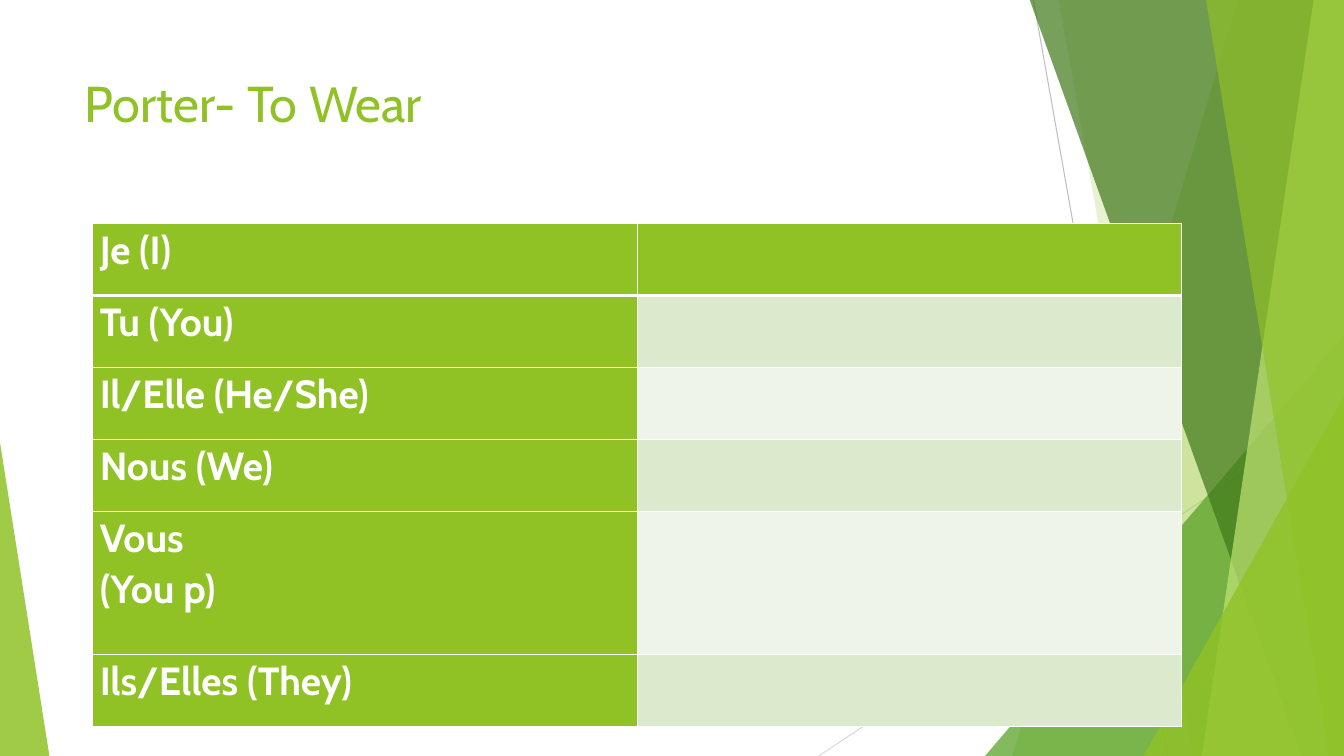
from dataclasses import dataclass

from lxml import etree
from pptx import Presentation
from pptx import util as u
from pptx.dml import color
from pptx.enum import shapes, text
from pptx.oxml import ns


@dataclass(frozen=True)
class Theme:
    font: str = "Cabin"
    title_size: int = 36
    cell_size: int = 28
    lime: str = "90C226"
    green: str = "54A021"
    forest: str = "3F7819"
    pale_lime: str = "C0E474"
    white: str = "FFFFFF"
    bands: tuple = ("DBE9CD", "EEF4E8")
    ray: str = "BFBFBF"
    faint_ray: str = "D9D9D9"


@dataclass(frozen=True)
class Box:
    left: float
    top: float
    width: float
    height: float

    @property
    def right(self):
        return self.left + self.width

    @property
    def bottom(self):
        return self.top + self.height

    def lengths(self):
        return [u.Inches(v) for v in (self.left, self.top, self.width, self.height)]


THEME = Theme()
PAGE = Box(0, 0, 13.33, 7.5)
PRONOUNS = ["Je (I)", "Tu (You)", "Il/Elle (He/She)", "Nous (We)",
            "Vous \v(You p)", "Ils/Elles (They)"]


def apply(target, values):
    for name, value in values.items():
        setattr(target, name, value)


def rgb(value):
    return color.RGBColor.from_string(value)


def style_font(font, size, ink, bold=False):
    apply(font, dict(name=THEME.font, size=u.Pt(size), bold=bold))
    font.color.rgb = rgb(ink)


def fill_glass(shape, tint, opacity):
    """Give a shape a see-through fill without outline or shadow."""
    shape.shadow.inherit = False
    shape.line.fill.background()
    shape.fill.solid()
    shape.fill.fore_color.rgb = rgb(tint)
    tint_xml = shape.fill._xPr.find(ns.qn("a:solidFill"))[0]
    etree.SubElement(tint_xml, ns.qn("a:alpha"), val=str(opacity * 1000))


def add_ray(slide, start, end, tint):
    ends = [u.Inches(v) for v in (*start, *end)]
    ray = slide.shapes.add_connector(shapes.MSO_CONNECTOR.STRAIGHT, *ends)
    ray.line.color.rgb = rgb(tint)
    ray.line.width = u.Pt(0.75)
    etree.SubElement(ray._element.spPr, ns.qn("a:effectLst"))


def add_blade(slide, box, top_x, bottom_x, tint, opacity):
    """A slanted band that runs from its left edge to the right of the box."""
    corners = [(top_x, box.top - 0.01), (box.right, box.top - 0.01),
               (box.right, box.bottom), (bottom_x, box.bottom)]
    points = [(u.Inches(x), u.Inches(y)) for x, y in corners]
    outline = slide.shapes.build_freeform(*points[0])
    outline.add_line_segments(points[1:], close=True)
    fill_glass(outline.convert_to_shape(), tint, opacity)


def add_corner(slide, box, apex, tint, opacity):
    corner = slide.shapes.add_shape(shapes.MSO_SHAPE.ISOSCELES_TRIANGLE, *box.lengths())
    corner.adjustments[0] = apex
    fill_glass(corner, tint, opacity)


def add_facets(slide, box):
    def bottom_right(width, height):
        return Box(box.right - width, box.bottom - height, width, height)

    # Thin rays behind the facets
    add_ray(slide, (10.25, box.top), (11.58, box.bottom), THEME.ray)
    add_ray(slide, (box.right, 4.03), (8.12, box.bottom), THEME.faint_ray)

    # Overlapping glass facets on the right
    add_blade(slide, box, 12.28, 10.04, THEME.lime, 30)
    add_blade(slide, box, 10.5, 11.83, THEME.lime, 20)
    add_corner(slide, bottom_right(3.56, 4.17), 1, THEME.green, 72)
    add_blade(slide, box, 10.21, 12.91, THEME.forest, 70)
    add_blade(slide, box, 13.03, 11.92, THEME.pale_lime, 70)
    add_blade(slide, box, 11.96, 13.18, THEME.lime, 65)
    add_corner(slide, bottom_right(1.99, 3.57), 1, THEME.lime, 80)

    # Sliver in the lower left corner
    add_corner(slide, Box(box.left, box.bottom - 3.11, 0.49, 3.11), 0, THEME.lime, 85)


def place_title(slide, box, wording):
    title = slide.shapes.title
    apply(title, dict(zip(("left", "top", "width", "height"), box.lengths())))
    frame = title.text_frame
    frame.text = wording
    apply(frame, dict(vertical_anchor=text.MSO_ANCHOR.TOP, word_wrap=True,
                      auto_size=text.MSO_AUTO_SIZE.NONE))
    heading = frame.paragraphs[0]
    heading.alignment = text.PP_ALIGN.LEFT
    style_font(heading.runs[0].font, THEME.title_size, THEME.lime)


def style_cell(cell, tint, top_line, bottom_line):
    cell.fill.solid()
    cell.fill.fore_color.rgb = rgb(tint)
    properties = cell._tc.get_or_add_tcPr()
    widths = dict(lnL=1, lnR=1, lnT=top_line, lnB=bottom_line)
    for place, (side, width) in enumerate(widths.items()):
        border = etree.Element(ns.qn("a:" + side), w=str(u.Pt(width)))
        paint = etree.SubElement(border, ns.qn("a:solidFill"))
        etree.SubElement(paint, ns.qn("a:srgbClr"), val=THEME.white)
        properties.insert(place, border)


def write_pronoun(cell, pronoun):
    apply(cell, dict(margin_left=u.Inches(0.07), margin_right=u.Inches(0.07),
                     margin_top=0, margin_bottom=0))
    cell.text = pronoun
    line = cell.text_frame.paragraphs[0]
    line.line_spacing = 1.07
    for run in line.runs:
        style_font(run.font, THEME.cell_size, THEME.white, bold=True)


def add_conjugation(slide, box, pronouns):
    table = slide.shapes.add_table(len(pronouns), 2, *box.lengths()).table
    for column in table.columns:
        column.width = u.Inches(box.width / 2)

    # Each line of wording gets an equal share of the height
    shares = [pronoun.count("\v") + 1 for pronoun in pronouns]
    for index, (pronoun, share) in enumerate(zip(pronouns, shares)):
        table.rows[index].height = u.Inches(box.height * share / sum(shares))
        answer_tint = THEME.bands[(index - 1) % 2] if index else THEME.lime
        top_line = 3 if index == 1 else 1
        bottom_line = 3 if index == 0 else 1
        for column, tint in enumerate((THEME.lime, answer_tint)):
            style_cell(table.cell(index, column), tint, top_line, bottom_line)
        write_pronoun(table.cell(index, 0), pronoun)


def main():
    deck = Presentation()
    apply(deck, dict(slide_width=u.Inches(PAGE.width), slide_height=u.Inches(PAGE.height)))
    slide = deck.slides.add_slide(deck.slide_layouts.get_by_name("Title Only"))
    add_facets(slide, PAGE)
    place_title(slide, Box(0.74, 0.67, 9.4, 1.44), "Porter- To Wear")
    add_conjugation(slide, Box(0.92, 2.22, 10.8, 4.99), PRONOUNS)
    deck.save("out.pptx")


if __name__ == "__main__":
    main()
